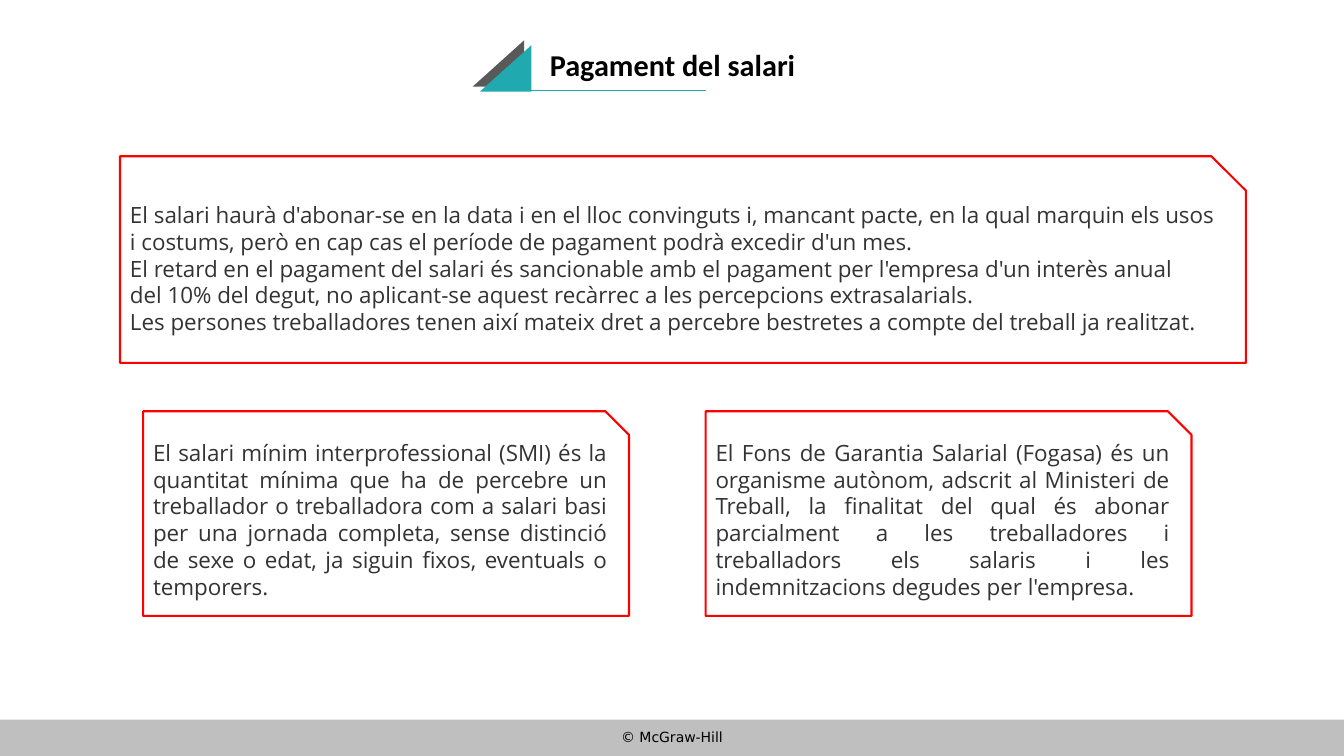
from pptx import Presentation
from pptx.dml.color import RGBColor
from pptx.enum.shapes import MSO_CONNECTOR, MSO_SHAPE
from pptx.enum.text import MSO_ANCHOR, PP_ALIGN
from pptx.oxml.ns import qn
from pptx.util import Inches, Pt
from lxml.etree import SubElement

TEAL, RED, INK, BLACK = "20AAAF", "FF0000", "333333", "000000"


def colour(value):
    return RGBColor.from_string(value)


class Slide:
    body_font = "Open Sans"
    body_size = 16

    def __init__(self, deck):
        self.deck = deck
        self.page = deck.slides.add_slide(deck.slide_layouts[6])

    def across(self, share):
        return int(self.deck.slide_width * share / 100)

    def down(self, share):
        return int(self.deck.slide_height * share / 100)

    def place(self, left, top, width, height):
        return self.across(left), self.down(top), self.across(width), self.down(height)

    def shape(self, kind, area, fill=None, line=None, corner=None):
        shape = self.page.shapes.add_shape(kind, *self.place(*area))
        shape.shadow.inherit = False
        if fill:
            shape.fill.solid()
            shape.fill.fore_color.rgb = colour(fill)
        else:
            shape.fill.background()
        if line:
            shape.line.color.rgb = colour(line)
            shape.line.width = Pt(1.5)
        else:
            shape.line.fill.background()
        if corner is not None:
            shape.adjustments[0] = corner
        return shape

    def rule(self, left, right, height):
        rule = self.page.shapes.add_connector(
            MSO_CONNECTOR.STRAIGHT, self.across(left), self.down(height),
            self.across(right), self.down(height))
        rule.line.color.rgb = colour(TEAL)
        rule.line.width = Pt(1)
        SubElement(rule.element.spPr, qn("a:effectLst"))

    def fill_text(self, box, paragraphs, align, size, font, ink, bold=False, spacing=None):
        frame = box.text_frame
        frame.word_wrap = True
        for number, lines in enumerate(paragraphs):
            para = frame.add_paragraph() if number else frame.paragraphs[0]
            para.alignment = align
            if spacing:
                para.line_spacing = spacing
            for position, line in enumerate(lines):
                if position:
                    para.add_line_break()
                span = para.add_run()
                span.text = line
                span.font.name = font
                span.font.size = Pt(size)
                span.font.bold = bold
                span.font.color.rgb = colour(ink)

    def label(self, area, text, align, size, font, bold=False, spacing=None):
        box = self.page.shapes.add_textbox(*self.place(*area))
        self.fill_text(box, [[text]], align, size, font, BLACK, bold, spacing)

    def card(self, area, paragraphs, align, corner=None):
        box = self.shape(MSO_SHAPE.SNIP_1_RECTANGLE, area, line=RED, corner=corner)
        box.text_frame.vertical_anchor = MSO_ANCHOR.MIDDLE
        self.fill_text(box, paragraphs, align, self.body_size, self.body_font, INK)


def main():
    deck = Presentation()
    deck.slide_width, deck.slide_height = Inches(13.33), Inches(7.5)
    slide = Slide(deck)

    slide.shape(MSO_SHAPE.RECTANGLE, (0, 95.2, 100, 4.8), fill="BFBFBF")
    slide.label((0, 95.73, 100, 4.27), "© McGraw-Hill", PP_ALIGN.CENTER, 10, "DejaVu Sans")

    for left, top, fill in ((35.17, 5.33, "595959"), (35.7, 6, TEAL)):
        slide.shape(MSO_SHAPE.ISOSCELES_TRIANGLE, (left, top, 3.83, 6.13), fill=fill, corner=1)
    slide.rule(39.3, 52.5, 12)
    slide.label((40.17, 6, 30, 6), "Pagament del salari", PP_ALIGN.LEFT, 21.6, "Calibri",
                bold=True, spacing=0.9)

    slide.card((8.93, 20.67, 83.77, 27.33), [
        ["El salari haurà d'abonar-se en la data i en el lloc convinguts i, mancant pacte, "
         "en la qual marquin els usos i costums, però en cap cas el període de pagament "
         "podrà excedir d'un mes."],
        ["El retard en el pagament del salari és sancionable amb el pagament per l'empresa "
         "d'un interès anual",
         "del 10% del degut, no aplicant-se aquest recàrrec a les percepcions extrasalarials.",
         "Les persones treballadores tenen així mateix dret a percebre bestretes a compte "
         "del treball ja realitzat."],
    ], PP_ALIGN.LEFT)

    definitions = (
        "El salari mínim interprofessional (SMI) és la quantitat mínima que ha de percebre "
        "un treballador o treballadora com a salari basi per una jornada completa, sense "
        "distinció de sexe o edat, ja siguin fixos, eventuals o temporers.",
        "El Fons de Garantia Salarial (Fogasa) és un organisme autònom, adscrit al Ministeri "
        "de Treball, la finalitat del qual és abonar parcialment a les treballadores i "
        "treballadors els salaris i les indemnitzacions degudes per l'empresa.",
    )
    for column, definition in enumerate(definitions):
        left = 10.65 + column * 41.85
        slide.card((left, 54.4, 36.15, 27.07), [[definition]], PP_ALIGN.JUSTIFY, corner=0.115)

    deck.save("out.pptx")


if __name__ == "__main__":
    main()
